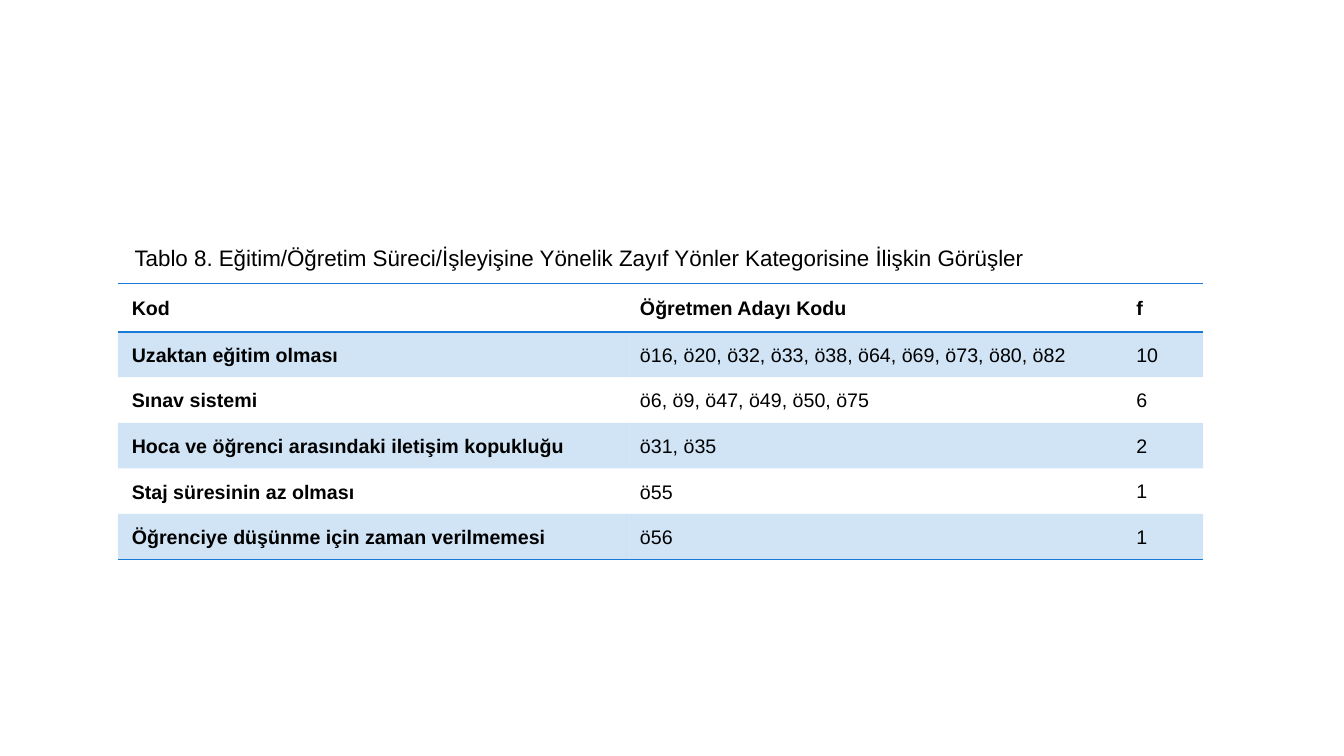
"""Build a slide with a captioned table of student teachers' opinions."""
from lxml import etree
from pptx import Presentation
from pptx.dml.color import RGBColor
from pptx.enum.shapes import MSO_SHAPE
from pptx.enum.text import MSO_ANCHOR, MSO_AUTO_SIZE, PP_ALIGN
from pptx.oxml.ns import qn
from pptx.util import Pt

RECTANGLE = MSO_SHAPE.RECTANGLE
JUSTIFY = PP_ALIGN.JUSTIFY
TOP, MIDDLE, BOTTOM = MSO_ANCHOR.TOP, MSO_ANCHOR.MIDDLE, MSO_ANCHOR.BOTTOM
GROW = MSO_AUTO_SIZE.SHAPE_TO_FIT_TEXT
BLACK = RGBColor(0x00, 0x00, 0x00)
WHITE = RGBColor(0xFF, 0xFF, 0xFF)
BLUE = RGBColor(0x17, 0x7B, 0xD5)
FONT = "Arial"

CAPTION = "Tablo 8. Eğitim/Öğretim Süreci/İşleyişine Yönelik Zayıf Yönler Kategorisine İlişkin Görüşler"
ROWS = [
    ("Kod", "Öğretmen Adayı Kodu", "f"),
    ("Uzaktan eğitim olması", "ö16, ö20, ö32, ö33, ö38, ö64, ö69, ö73, ö80, ö82", "10"),
    ("Sınav sistemi", "ö6, ö9, ö47, ö49, ö50, ö75", "6"),
    ("Hoca ve öğrenci arasındaki iletişim kopukluğu", "ö31, ö35", "2"),
    ("Staj süresinin az olması", "ö55", "1"),
    ("Öğrenciye düşünme için zaman verilmemesi", "ö56", "1"),
]
COLUMN_WIDTHS = [363, 354.5, 57.8]
HEADER_HEIGHT, ROW_HEIGHT = 34.6, 32.55
LAST = len(ROWS) - 1
RULE_WIDTHS = {0: 1, 1: 1.5, LAST + 1: 1}


def add_text(para, text, size, bold=False):
    span = para.add_run()
    span.text = text
    span.font.name = FONT
    span.font.size = Pt(size)
    span.font.bold = bold
    span.font.color.rgb = BLACK


def add_border(cell, side, width):
    line = etree.SubElement(cell._tc.get_or_add_tcPr(), qn("a:" + side))
    if width is None:
        etree.SubElement(line, qn("a:noFill"))
        return
    line.set("w", str(Pt(width)))
    fill = etree.SubElement(line, qn("a:solidFill"))
    etree.SubElement(fill, qn("a:srgbClr")).set("val", str(BLUE))


deck = Presentation()
deck.slide_width, deck.slide_height = Pt(960), Pt(540)
page = deck.slides.add_slide(deck.slide_layouts[6])

backdrop = page.shapes.add_shape(RECTANGLE, 0, 0, Pt(960), Pt(540))
backdrop.shadow.inherit = False
backdrop.fill.solid()
backdrop.fill.fore_color.rgb = WHITE
backdrop.line.fill.background()

table_height = HEADER_HEIGHT + LAST * ROW_HEIGHT
frame = page.shapes.add_table(len(ROWS), len(COLUMN_WIDTHS), Pt(84.2), Pt(202.3),
                              Pt(sum(COLUMN_WIDTHS)), Pt(table_height))
table = frame.table
table.first_row = False
table.horz_banding = False
for column, width in zip(table.columns, COLUMN_WIDTHS):
    column.width = Pt(width)

for row_index, texts in enumerate(ROWS):
    header = row_index == 0
    table.rows[row_index].height = Pt(HEADER_HEIGHT if header else ROW_HEIGHT)
    for column_index, text in enumerate(texts):
        cell = table.cell(row_index, column_index)
        cell.margin_left = Pt(10)
        cell.margin_right = Pt(0.7 if header else 6.5)
        cell.margin_top = Pt(7.9)
        cell.margin_bottom = Pt(7.6)
        if header:
            cell.vertical_anchor = MIDDLE
        else:
            cell.vertical_anchor = TOP if column_index == 2 else BOTTOM
        para = cell.text_frame.paragraphs[0]
        para.alignment = JUSTIFY
        para.line_spacing = 1.07
        para.space_after = Pt(8)
        add_text(para, text, 14, header or column_index == 0)
        add_border(cell, "lnL", None)
        add_border(cell, "lnR", None)
        add_border(cell, "lnT", RULE_WIDTHS.get(row_index))
        add_border(cell, "lnB", RULE_WIDTHS.get(row_index + 1))
        if row_index % 2:
            cell.fill.solid()
            cell.fill.fore_color.rgb = BLUE
            shade = cell._tc.tcPr.find(qn("a:solidFill"))[0]
            etree.SubElement(shade, qn("a:alpha")).set("val", "20000")
        else:
            cell.fill.background()

box = page.shapes.add_textbox(Pt(89), Pt(170.8), Pt(775.3), Pt(26.6))
box.text_frame.word_wrap = True
box.text_frame.auto_size = GROW
add_text(box.text_frame.paragraphs[0], CAPTION, 16)

deck.save("out.pptx")
